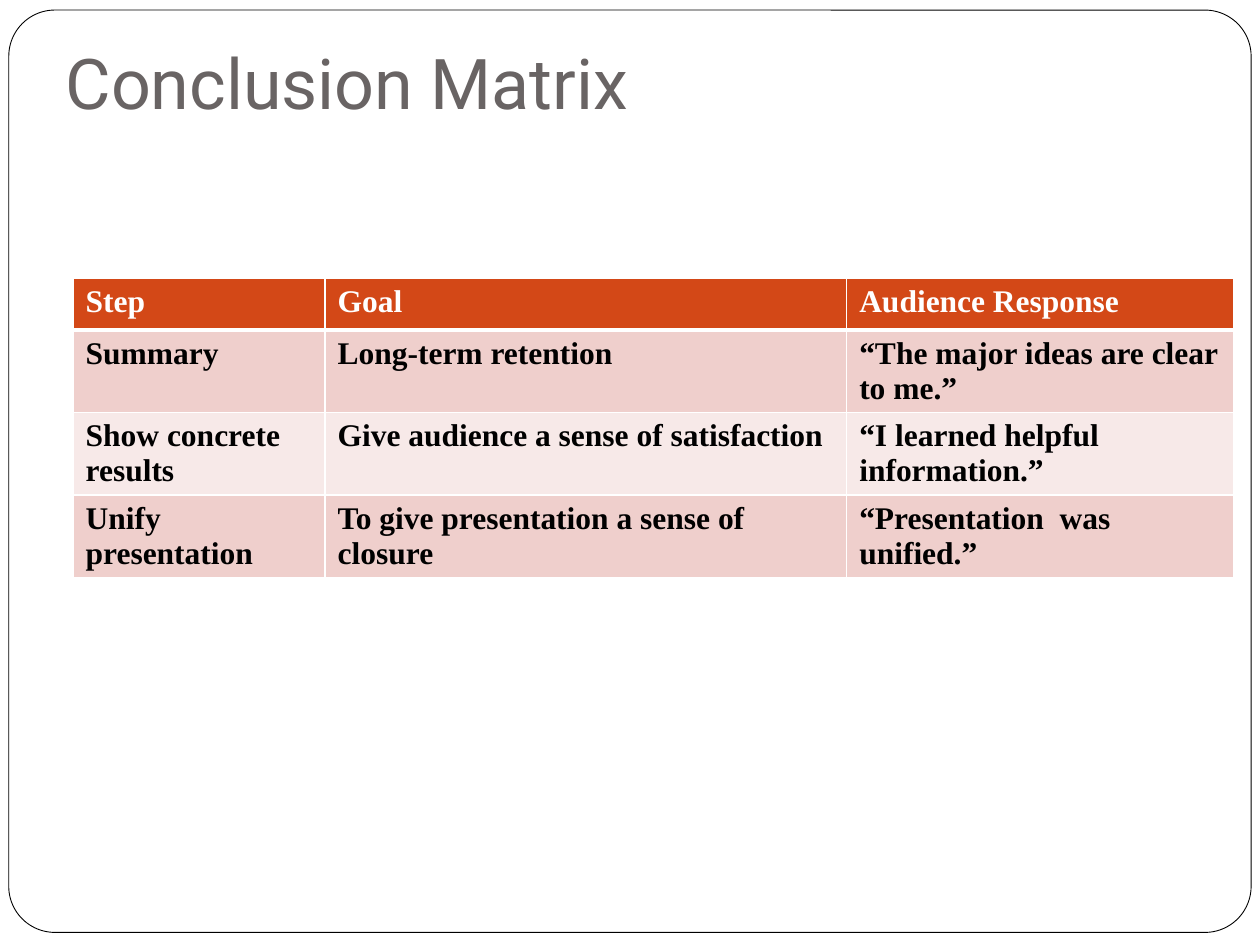
from dataclasses import dataclass

from pptx import Presentation
from pptx.dml.color import RGBColor as RGB
from pptx.enum.shapes import MSO_SHAPE as Kind
from pptx.enum.text import MSO_ANCHOR as Anchor, MSO_AUTO_SIZE as Fit, PP_ALIGN as Align
from pptx.oxml import parse_xml
from pptx.oxml.ns import nsdecls
from pptx.util import Inches, Pt


@dataclass(frozen=True)
class Theme:
    white: str = "FFFFFF"
    ink: str = "000000"
    title: str = "696464"
    head: str = "D34817"
    bands: tuple = ("EFCFCC", "F7E9E8")
    sans: str = "Roboto"
    serif: str = "Times New Roman"
    big: int = 40
    small: int = 18


@dataclass(frozen=True)
class Step:
    name: str
    goal: str
    reply: str


THEME = Theme()
HEAD = Step("Step", "Goal", "Audience Response")
STEPS = [
    Step("Summary", "Long-term retention", "“The major ideas are clear to me.”"),
    Step("Show concrete results", "Give audience a sense of satisfaction",
         "“I learned helpful information.”"),
    Step("Unify presentation", "To give presentation a sense of closure",
         "“Presentation  was unified.”"),
]
WIDTHS = (2, 4.14, 3.07)
ROW = 0.41


def write(frame, text: str, *, font: str, size: int, color: str, bold: bool = False) -> None:
    para = frame.paragraphs[0]
    para.alignment = Align.LEFT
    run = para.add_run()
    run.text = text
    run.font.name = font
    run.font.size = Pt(size)
    run.font.bold = bold
    run.font.color.rgb = RGB.from_string(color)


def edge(cell, base: float) -> None:
    """Draw white borders round a cell, with a given bottom and 1 pt elsewhere."""
    props = cell._tc.get_or_add_tcPr()
    top = 3 if base == 0 else 1
    for spot, (side, width) in enumerate((("L", 1), ("R", 1), ("T", top), ("B", base or 1))):
        props.insert(spot, parse_xml(
            f'<a:ln{side} {nsdecls("a")} w="{Pt(width)}"><a:solidFill>'
            f'<a:srgbClr val="{THEME.white}"/></a:solidFill></a:ln{side}>'))


def draw_row(table, row: int, step: Step, fill: str, color: str, base: float) -> None:
    table.rows[row].height = Inches(ROW)
    for col, text in enumerate((step.name, step.goal, step.reply)):
        cell = table.cell(row, col)
        cell.fill.solid()
        cell.fill.fore_color.rgb = RGB.from_string(fill)
        edge(cell, base)
        write(cell.text_frame, text, font=THEME.serif, size=THEME.small,
              color=color, bold=True)


def draw_border(slide) -> None:
    box = slide.shapes.add_shape(Kind.ROUNDED_RECTANGLE, Inches(0.07), Inches(0.08),
                                 Inches(9.86), Inches(7.32))
    box.adjustments[0] = 0.05
    box.shadow.inherit = False
    box.fill.solid()
    box.fill.fore_color.rgb = RGB.from_string(THEME.white)
    box.line.color.rgb = RGB.from_string(THEME.ink)
    box.line.width = Pt(0.5)
    # Send behind the title
    slide.shapes._spTree.insert(2, box._element)


def draw_title(slide, text: str) -> None:
    title = slide.shapes.title
    title.left, title.top = Inches(0.42), Inches(-0.03)
    title.width, title.height = Inches(9.36), Inches(1.11)
    frame = title.text_frame
    frame.auto_size = Fit.NONE
    frame.word_wrap = True
    frame.vertical_anchor = Anchor.BOTTOM
    frame.margin_bottom = Inches(0.1)
    write(frame, text, font=THEME.sans, size=THEME.big, color=THEME.title)


def draw_table(slide) -> None:
    shape = slide.shapes.add_table(len(STEPS) + 1, len(WIDTHS), Inches(0.58), Inches(2.21),
                                   Inches(sum(WIDTHS)), Inches(2.51))
    table = shape.table
    for col, width in zip(table.columns, WIDTHS):
        col.width = Inches(width)
    draw_row(table, 0, HEAD, THEME.head, THEME.white, 3)
    for row, step in enumerate(STEPS, 1):
        fill = THEME.bands[(row - 1) % 2]
        # The first body row shares the thick rule under the header
        draw_row(table, row, step, fill, THEME.ink, 0 if row == 1 else 1)
    shape.height = Inches(2.51)


def main() -> None:
    deck = Presentation()
    deck.slide_width, deck.slide_height = Inches(10), Inches(7.5)
    slide = deck.slides.add_slide(deck.slide_layouts[5])
    draw_border(slide)
    draw_title(slide, "Conclusion Matrix")
    draw_table(slide)
    deck.save("out.pptx")


if __name__ == "__main__":
    main()
